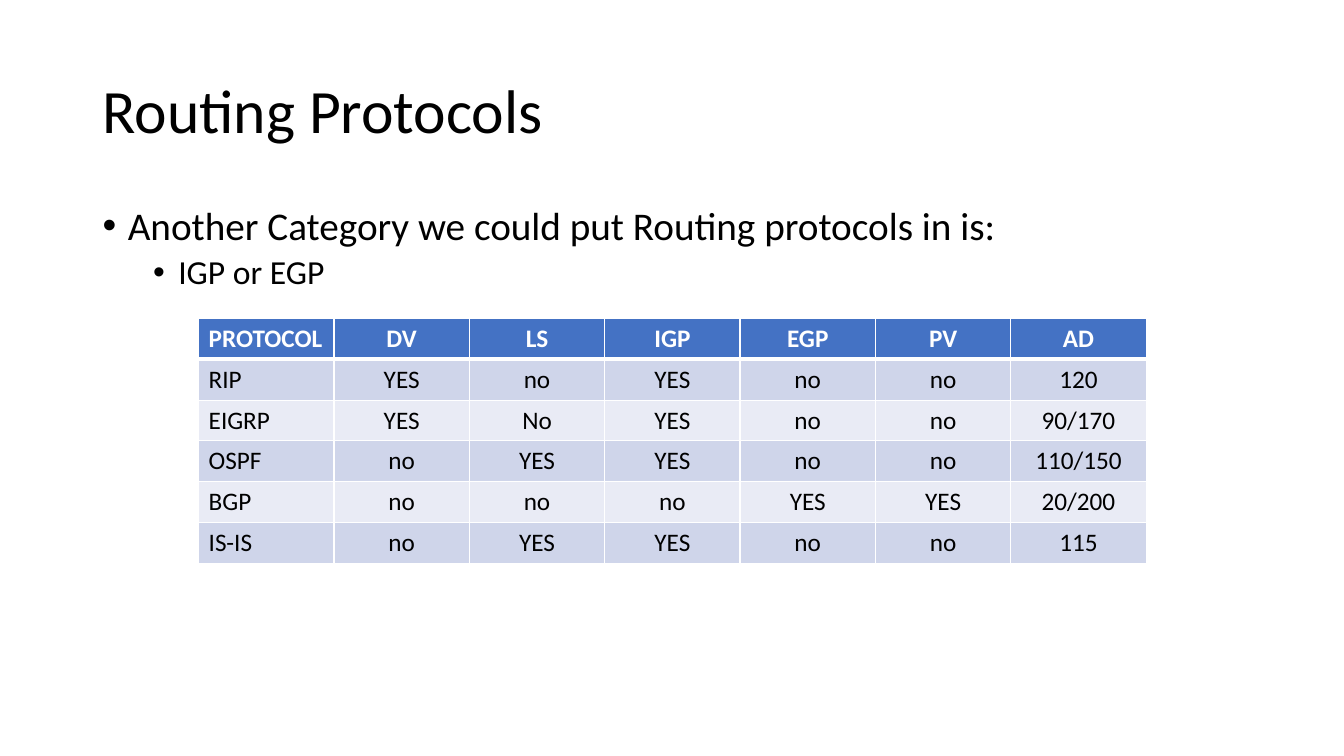
from lxml import etree
from pptx import Presentation
from pptx.dml.color import RGBColor
from pptx.enum.text import MSO_ANCHOR, PP_ALIGN
from pptx.oxml.ns import qn
from pptx.util import Inches, Pt

LEFT, CENTER = PP_ALIGN.LEFT, PP_ALIGN.CENTER
TOP, MIDDLE = MSO_ANCHOR.TOP, MSO_ANCHOR.MIDDLE

BLACK, WHITE, BLUE = "000000", "FFFFFF", "4472C4"
BANDS = ("CFD5EA", "E9EBF5")

BULLETS = [
    # text, level, size, space before
    ("Another Category we could put Routing protocols in is:", 0, 28, 0),
    ("IGP or EGP", 1, 24, 5),
]
PROTOCOLS = [
    ("PROTOCOL", "DV", "LS", "IGP", "EGP", "PV", "AD"),
    ("RIP", "YES", "no", "YES", "no", "no", "120"),
    ("EIGRP", "YES", "No", "YES", "no", "no", "90/170"),
    ("OSPF", "no", "YES", "YES", "no", "no", "110/150"),
    ("BGP", "no", "no", "no", "YES", "YES", "20/200"),
    ("IS-IS", "no", "YES", "YES", "no", "no", "115"),
]


def color(hex_string):
    return RGBColor.from_string(hex_string)


class SlideBuilder:
    font_name = "Calibri"

    def __init__(self, slide):
        self.slide = slide

    def format_font(self, paragraph, size, text_color=BLACK, bold=False):
        for run in paragraph.runs:
            run.font.name = self.font_name
            run.font.size = Pt(size)
            run.font.bold = bold
            run.font.color.rgb = color(text_color)

    def text_frame(self, left, top, width, height, anchor):
        shape = self.slide.shapes.add_textbox(
            Inches(left), Inches(top), Inches(width), Inches(height))
        shape.text_frame.word_wrap = True
        shape.text_frame.vertical_anchor = anchor
        return shape.text_frame

    def title(self, text, left, top, width, height):
        paragraph = self.text_frame(left, top, width, height, MIDDLE).paragraphs[0]
        paragraph.text = text
        paragraph.line_spacing = 0.9
        self.format_font(paragraph, 44)

    def bullets(self, items, left, top, width, height):
        frame = self.text_frame(left, top, width, height, TOP)
        for index, (text, level, size, space_before) in enumerate(items):
            paragraph = frame.add_paragraph() if index else frame.paragraphs[0]
            paragraph.text = text
            paragraph.level = level
            paragraph.line_spacing = 0.9
            paragraph.space_before = Pt(space_before)
            properties = paragraph._p.get_or_add_pPr()
            properties.set("marL", str(Inches(0.25 + 0.5 * level)))
            properties.set("indent", str(Inches(-0.25)))
            etree.SubElement(properties, qn("a:buFont"), typeface="Arial")
            etree.SubElement(properties, qn("a:buChar"), char="•")
            self.format_font(paragraph, size)

    def cell_borders(self, cell, top_width, bottom_width):
        properties = cell._tc.get_or_add_tcPr()
        widths = {"lnL": 1, "lnR": 1, "lnT": top_width, "lnB": bottom_width}
        for side, width in widths.items():
            line = etree.SubElement(properties, qn(f"a:{side}"), w=str(Pt(width)))
            fill = etree.SubElement(line, qn("a:solidFill"))
            etree.SubElement(fill, qn("a:srgbClr"), val=WHITE)

    def table(self, rows, left, top, width, height):
        table = self.slide.shapes.add_table(
            len(rows), len(rows[0]), Inches(left), Inches(top),
            Inches(width), Inches(height)).table
        table.horz_banding = False
        for column in table.columns:
            column.width = Inches(width / len(rows[0]))
        for row_index, row in enumerate(rows):
            header = row_index == 0
            fill_color = BLUE if header else BANDS[(row_index - 1) % 2]
            for column_index, text in enumerate(row):
                cell = table.cell(row_index, column_index)
                # The line under the header row is heavier
                self.cell_borders(cell, 3 if row_index == 1 else 1, 3 if header else 1)
                cell.fill.solid()
                cell.fill.fore_color.rgb = color(fill_color)
                paragraph = cell.text_frame.paragraphs[0]
                paragraph.text = text
                paragraph.alignment = CENTER if column_index else LEFT
                self.format_font(paragraph, 18, WHITE if header else BLACK, header)


def main():
    presentation = Presentation()
    presentation.slide_width = Inches(13.33)
    presentation.slide_height = Inches(7.5)
    builder = SlideBuilder(presentation.slides.add_slide(presentation.slide_layouts[6]))

    # Heading and bullets
    builder.title("Routing Protocols", 0.92, 0.4, 11.5, 1.45)
    builder.bullets(BULLETS, 0.92, 2, 11.5, 4.76)

    # Protocol comparison
    builder.table(PROTOCOLS, 1.97, 3.16, 9.4, 2.43)

    presentation.save("out.pptx")


if __name__ == "__main__":
    main()
